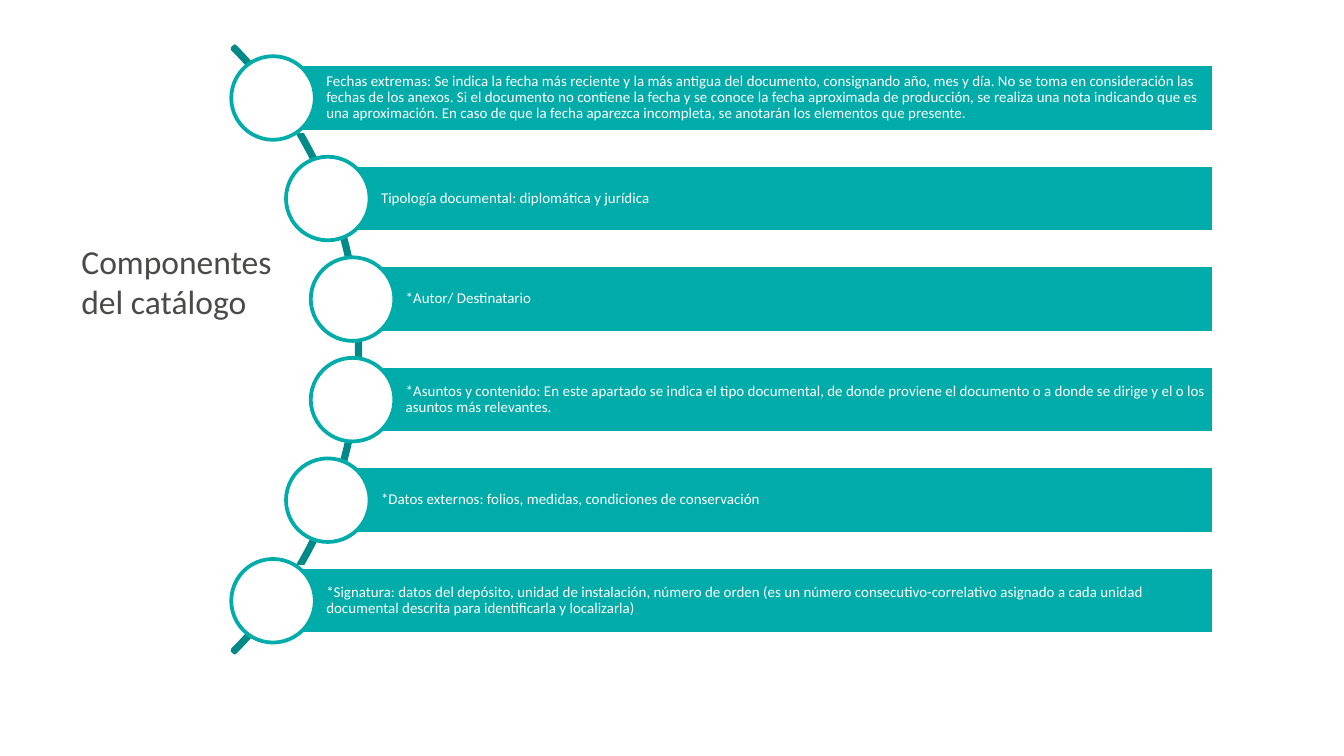
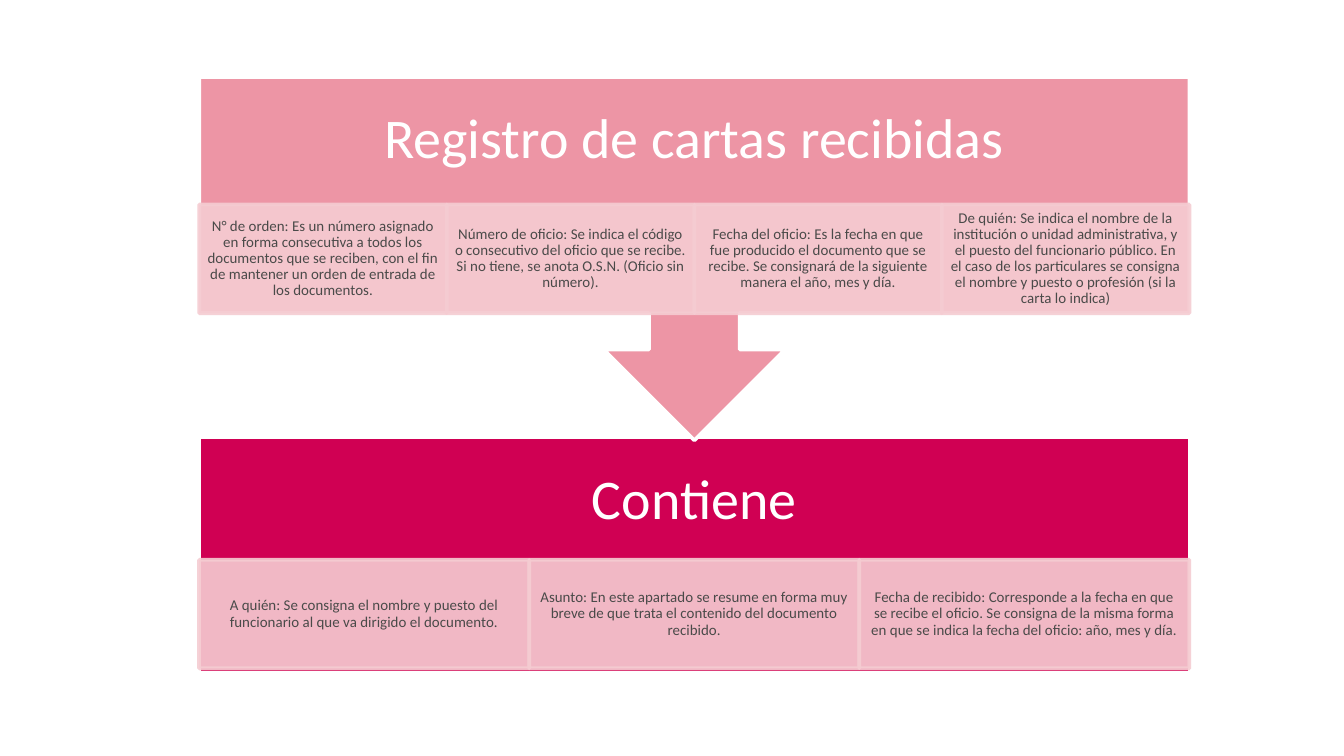
from math import sqrt

from lxml import etree
from pptx import Presentation
from pptx.dml.color import RGBColor
from pptx.enum.shapes import MSO_SHAPE
from pptx.enum.text import MSO_ANCHOR, MSO_AUTO_SIZE, PP_ALIGN
from pptx.oxml.ns import qn
from pptx.util import Pt

RECT = MSO_SHAPE.RECTANGLE
OVAL = MSO_SHAPE.OVAL
ARC = MSO_SHAPE.BLOCK_ARC
CALLOUT = MSO_SHAPE.UP_ARROW_CALLOUT
MIDDLE = MSO_ANCHOR.MIDDLE
TOP = MSO_ANCHOR.TOP
LEFT = PP_ALIGN.LEFT
CENTER = PP_ALIGN.CENTER
GROW = MSO_AUTO_SIZE.SHAPE_TO_FIT_TEXT

WHITE = RGBColor(0xFF, 0xFF, 0xFF)
GRAY = RGBColor(0x4A, 0x4A, 0x49)
TEAL = RGBColor(0x00, 0xAC, 0xA9)
DEEP = RGBColor(0x00, 0x8A, 0x87)
RED = RGBColor(0xD0, 0x00, 0x53)
ROSE = RGBColor(0xED, 0x95, 0xA5)
PALE = RGBColor(0xF5, 0xCC, 0xD2)

FONT = "Calibri"
SMALL = 8
PARTS = [
    "Fechas extremas: Se indica la fecha más reciente y la más antigua del documento, consignando año, mes y día. No se toma en consideración las fechas de los anexos. Si el documento no contiene la fecha y se conoce la fecha aproximada de producción, se realiza una nota indicando que es una aproximación. En caso de que la fecha aparezca incompleta, se anotarán los elementos que presente.",
    "Tipología documental: diplomática y jurídica",
    "*Autor/ Destinatario",
    "*Asuntos y contenido: En este apartado se indica el tipo documental, de donde proviene el documento o a donde se dirige y el o los asuntos más relevantes.",
    "*Datos externos: folios, medidas, condiciones de conservación",
    "*Signatura: datos del depósito, unidad de instalación, número de orden (es un número consecutivo-correlativo asignado a cada unidad documental descrita para identificarla y localizarla)",
]
LETTERS = [
    "N° de orden: Es un número asignado en forma consecutiva a todos los documentos que se reciben, con el fin de mantener un orden de entrada de los documentos.",
    "Número de oficio: Se indica el código o consecutivo del oficio que se recibe. Si no tiene, se anota O.S.N. (Oficio sin número).",
    "Fecha del oficio: Es la fecha en que fue producido el documento que se recibe. Se consignará de la siguiente manera el año, mes y día.",
    "De quién: Se indica el nombre de la institución o unidad administrativa, y el puesto del funcionario público. En el caso de los particulares se consigna el nombre y puesto o profesión (si la carta lo indica)",
]
FIELDS = [
    "A quién: Se consigna el nombre y puesto del funcionario al que va dirigido el documento.",
    "Asunto: En este apartado se resume en forma muy breve de que trata el contenido del documento recibido.",
    "Fecha de recibido: Corresponde a la fecha en que se recibe el oficio. Se consigna de la misma forma en que se indica la fecha del oficio: año, mes y día.",
]


def add_form(slide, kind, box, fill, line):
    form = slide.shapes.add_shape(kind, *map(Pt, box))
    form.shadow.inherit = False
    if fill is None:
        form.fill.background()
    else:
        form.fill.solid()
        form.fill.fore_color.rgb = fill
    form.line.color.rgb = line
    form.line.width = Pt(2)
    return form


def fade(form, share):
    for color in form.element.spPr.iter(qn("a:srgbClr")):
        etree.SubElement(color, qn("a:alpha")).set("val", str(share * 1000))


def write(form, text, size, color, align, insets, anchor=MIDDLE, tight=True):
    frame = form.text_frame
    frame.word_wrap = True
    frame.vertical_anchor = anchor
    (frame.margin_left, frame.margin_top,
     frame.margin_right, frame.margin_bottom) = map(Pt, insets)
    para = frame.paragraphs[0]
    para.alignment = align
    if tight:
        para.line_spacing = 0.9
        para.space_after = Pt(size * 0.35)
    run = para.add_run()
    run.text = text
    run.font.name = FONT
    run.font.size = Pt(size)
    run.font.color.rgb = color


def add_text(slide, box, *args, **style):
    label = slide.shapes.add_textbox(*map(Pt, box))
    write(label, *args, **style)
    return label


def draw_curve(slide, box, texts):
    left, top, width, height = box
    arc_size, reach, disc, bar = 459.4, 227.2, 44.8, 36
    pitch = height / len(texts)
    mid_x, mid_y = left - 160.7, top + height / 2
    arc = add_form(slide, ARC, (mid_x - arc_size / 2, mid_y - arc_size / 2,
                                arc_size, arc_size), None, DEEP)
    for index, value in enumerate((189, 27, 0.004)):
        arc.adjustments[index] = value
    for index, text in enumerate(texts):
        y = top + (index + 0.5) * pitch
        x = mid_x + sqrt(reach ** 2 - (y - mid_y) ** 2)
        strip = add_form(slide, RECT, (x, y - bar / 2, left + width - x, bar),
                         TEAL, WHITE)
        write(strip, text, SMALL, WHITE, LEFT, (28.5, 1.5, 1.5, 1.5))
        add_form(slide, OVAL, (x - disc / 2, y - disc / 2, disc, disc),
                 WHITE, TEAL)


def draw_title(slide, box, text):
    label = add_text(slide, box, text, 18, GRAY, LEFT, (7.2, 3.6, 7.2, 3.6),
                     anchor=TOP, tight=False)
    label.text_frame.auto_size = GROW


def draw_panel(slide, box, kind, fill, title, texts, drop):
    left, top, width, height = box
    panel = add_form(slide, kind, box, fill, WHITE)
    if kind == CALLOUT:
        panel.rotation = 180
    add_text(slide, (left, top, width, 68.3), title, 30, WHITE, CENTER,
             (16.8, 16.8, 16.8, 16.8))
    cell = width / len(texts)
    for index, text in enumerate(texts):
        form = add_form(slide, RECT, (left + index * cell, top + drop, cell, 58.2),
                        PALE, PALE)
        fade(form, 90)
        write(form, text, SMALL, GRAY, CENTER, (4, 0.8, 4, 0.8))


def main():
    deck = Presentation()
    deck.slide_width, deck.slide_height = Pt(720), Pt(405)
    blank = deck.slide_layouts[6]

    catalog = deck.slides.add_slide(blank)
    draw_curve(catalog, (124, 25.6, 526.2, 323.2), PARTS)
    draw_title(catalog, (36.5, 125.5, 118, 51), "Componentes del catálogo")

    letters = deck.slides.add_slide(blank)
    draw_panel(letters, (106.7, 234.2, 530.5, 126.5), RECT, RED,
               "Contiene", FIELDS, 65.7)
    draw_panel(letters, (106.7, 41.3, 530.5, 194.6), CALLOUT, ROSE,
               "Registro de cartas recibidas", LETTERS, 68.3)
    deck.save("out.pptx")


if __name__ == "__main__":
    main()
